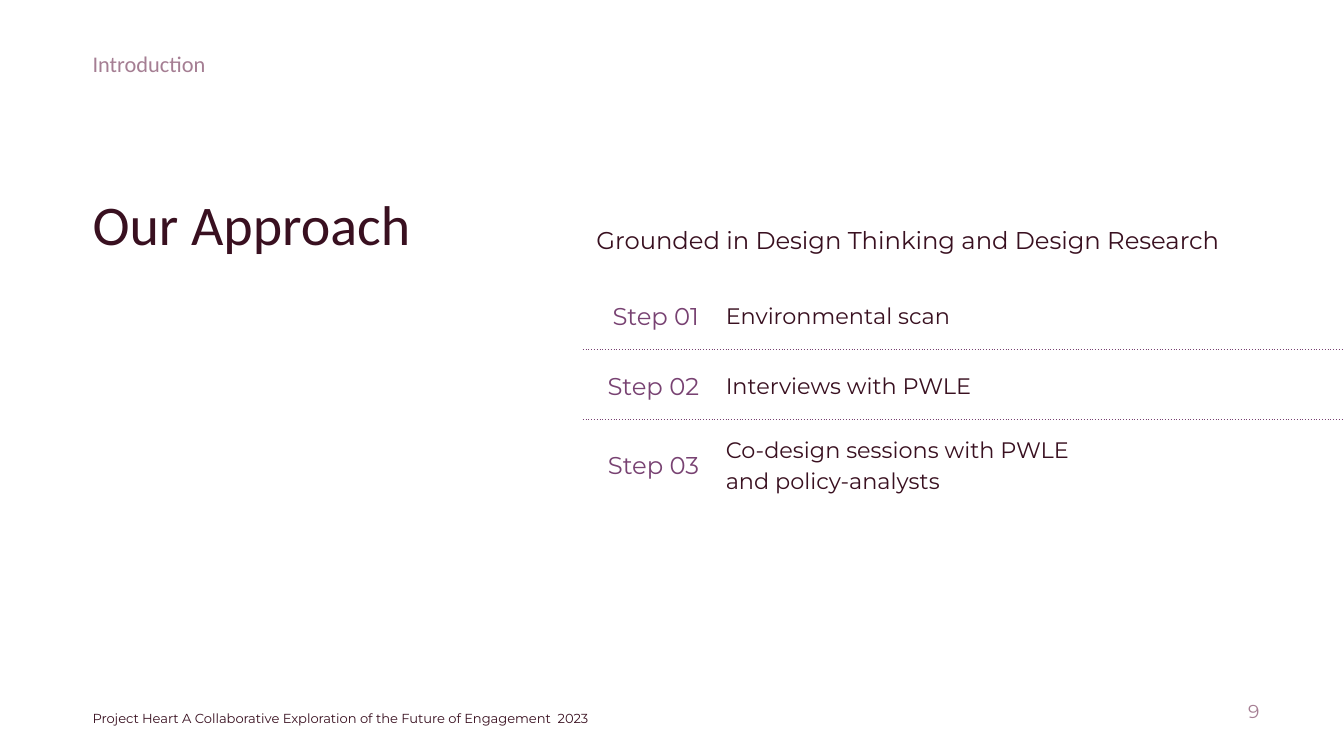
from dataclasses import dataclass

from lxml import etree
from pptx import Presentation
from pptx import util as u
from pptx.dml.color import RGBColor
from pptx.enum import text
from pptx.oxml import ns

PLUM = RGBColor(0x39, 0x10, 0x20)
PURPLE = RGBColor(0x78, 0x42, 0x72)
MAUVE = RGBColor(0xA5, 0x7E, 0x93)
WHITE = RGBColor(0xFF, 0xFF, 0xFF)
LEFT, RIGHT = text.PP_ALIGN.LEFT, text.PP_ALIGN.RIGHT
MARGIN = u.Inches(0.1)
PAGE_WIDTH = u.Inches(10)
PAGE_HEIGHT = PAGE_WIDTH * 9 // 16


@dataclass(frozen=True)
class Style:
    size: float
    color: RGBColor
    font: str = "Montserrat"
    align: text.PP_ALIGN = LEFT
    line_spacing: float = 1.0
    before: float = 0
    after: float = 0


@dataclass(frozen=True)
class Label:
    words: str
    left: float
    top: float
    width: float
    height: float
    style: Style


@dataclass(frozen=True)
class Step:
    name: str
    lines: tuple[str, ...]
    height: float


LABELS = [
    Label("Introduction", 0.59, 0.27, 4.39, 0.4, Style(12, MAUVE, "Calibri")),
    Label("Project Heart A Collaborative Exploration of the Future of Engagement  2023",
          0.59, 5.26, 6.71, 0.36, Style(7, PLUM, line_spacing=0.8, before=20, after=10)),
    Label("Our Approach", 0.59, 1.31, 2.95, 3.8, Style(30, PLUM, "Calibri")),
    Label("Grounded in Design Thinking and Design Research",
          4.34, 1.54, 5.14, 0.37, Style(13, PLUM, line_spacing=1.15, after=20)),
    Label("9", 8.83, 5.12, 0.64, 0.5, Style(10, MAUVE, align=RIGHT)),
]
STEPS = [
    Step("Step 01", ("Environmental scan",), 0.52),
    Step("Step 02", ("Interviews with PWLE",), 0.52),
    Step("Step 03", ("Co-design sessions with PWLE ", "and policy-analysts"), 0.64),
]
STEP_NAME = Style(13, PURPLE, align=RIGHT, line_spacing=1.15, after=20)
STEP_TEXT = Style(12, PLUM, line_spacing=1.15, after=20)
COLUMNS = (0.96, 5.33)


def write(frame, lines: tuple[str, ...], style: Style) -> None:
    """Fill a text frame with one paragraph, one run per line."""
    frame.word_wrap = True
    para = frame.paragraphs[0]
    para.alignment = style.align
    para.line_spacing = style.line_spacing
    para.space_before = u.Pt(style.before)
    para.space_after = u.Pt(style.after)
    for number, line in enumerate(lines):
        if number:
            para.add_line_break()
        span = para.add_run()
        span.text = line
        span.font.name = style.font
        span.font.size = u.Pt(style.size)
        span.font.color.rgb = style.color


def set_margins(target) -> None:
    target.margin_left = target.margin_right = MARGIN
    target.margin_top = target.margin_bottom = MARGIN


def add_label(page, label: Label) -> None:
    box = page.shapes.add_textbox(u.Inches(label.left), u.Inches(label.top),
                                  u.Inches(label.width), u.Inches(label.height))
    set_margins(box.text_frame)
    write(box.text_frame, (label.words,), label.style)


def add_border(cell, side: str, color: RGBColor, dash: str) -> None:
    properties = cell._tc.get_or_add_tcPr()
    line = etree.SubElement(properties, ns.qn(f"a:ln{side}"), w=str(u.Pt(0.75)))
    fill = etree.SubElement(line, ns.qn("a:solidFill"))
    etree.SubElement(fill, ns.qn("a:srgbClr"), val=str(color))
    etree.SubElement(line, ns.qn("a:prstDash"), val=dash)


def add_steps(page, steps: list[Step]) -> None:
    frame = page.shapes.add_table(
        len(steps), len(COLUMNS), u.Inches(4.34), u.Inches(2.08),
        u.Inches(sum(COLUMNS)), u.Inches(sum(step.height for step in steps)))
    table = frame.table
    table.first_row = table.horz_banding = False
    for column, width in zip(table.columns, COLUMNS):
        column.width = u.Inches(width)

    plain, dotted = (WHITE, "solid"), (PURPLE, "dot")
    for index, step in enumerate(steps):
        table.rows[index].height = u.Inches(step.height)
        # Dotted rules run only between steps
        above = dotted if index else plain
        below = dotted if index < len(steps) - 1 else plain
        contents = (((step.name,), STEP_NAME), (step.lines, STEP_TEXT))
        for cell, (lines, style) in zip(table.rows[index].cells, contents):
            set_margins(cell)
            cell.vertical_anchor = text.MSO_ANCHOR.MIDDLE
            write(cell.text_frame, lines, style)
            for side, border in zip("LRTB", (plain, plain, above, below)):
                add_border(cell, side, *border)
            cell.fill.background()


def main() -> None:
    deck = Presentation()
    deck.slide_width, deck.slide_height = PAGE_WIDTH, PAGE_HEIGHT
    page = deck.slides.add_slide(deck.slide_layouts[6])
    page.background.fill.solid()
    page.background.fill.fore_color.rgb = WHITE

    # Headings, footer and page number
    for label in LABELS:
        add_label(page, label)

    # Table of steps
    add_steps(page, STEPS)
    deck.save("out.pptx")


if __name__ == "__main__":
    main()
